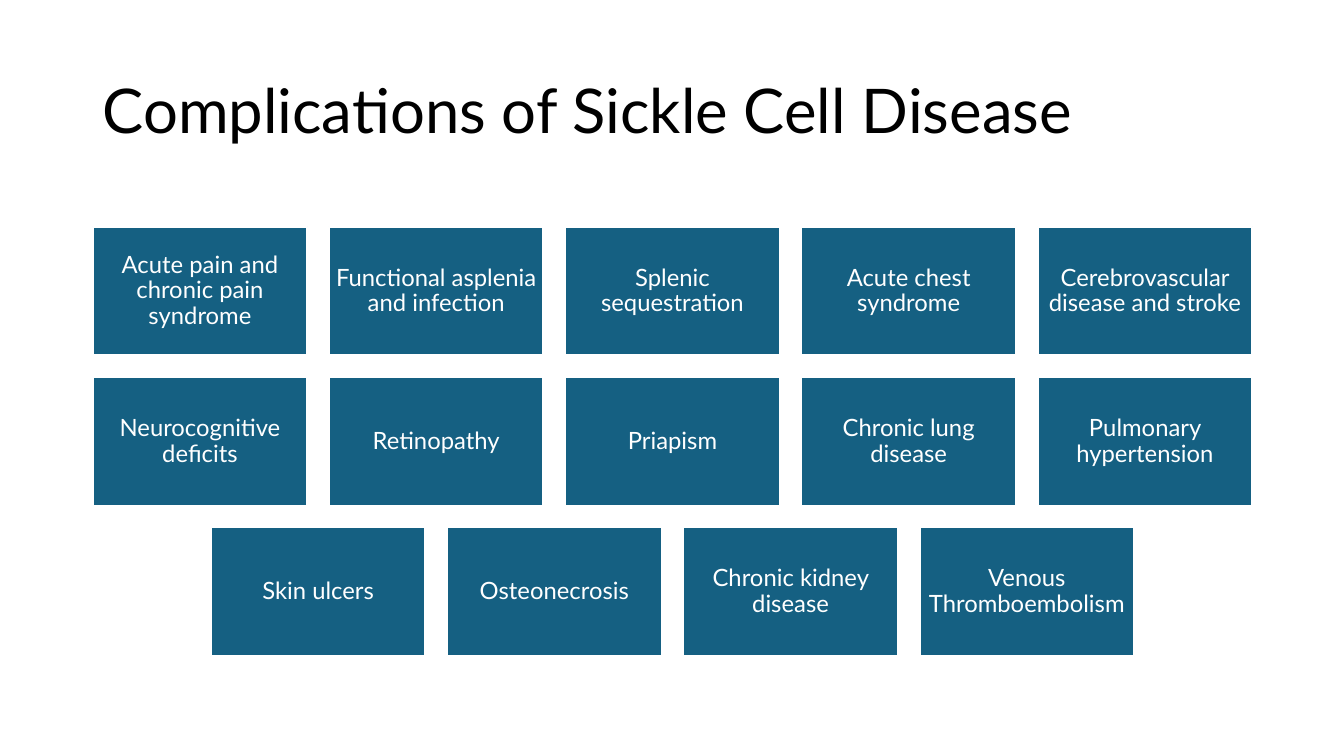
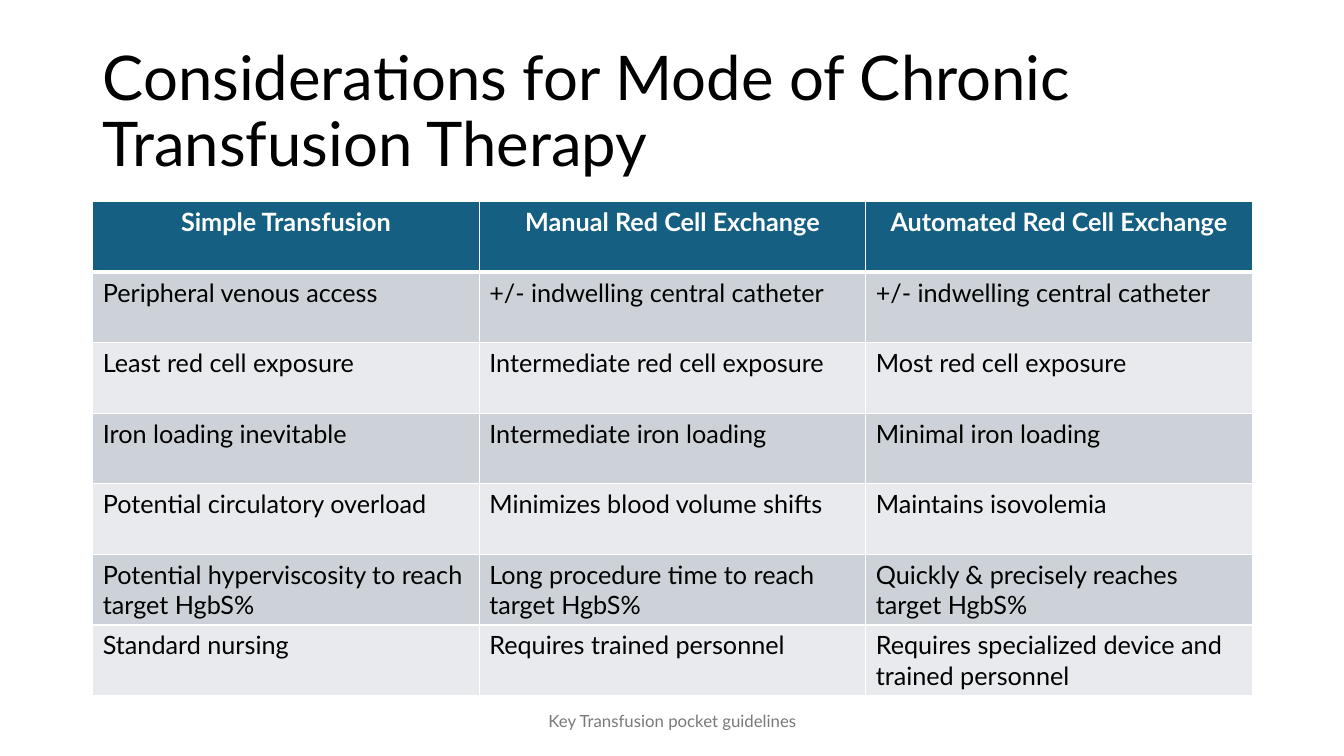
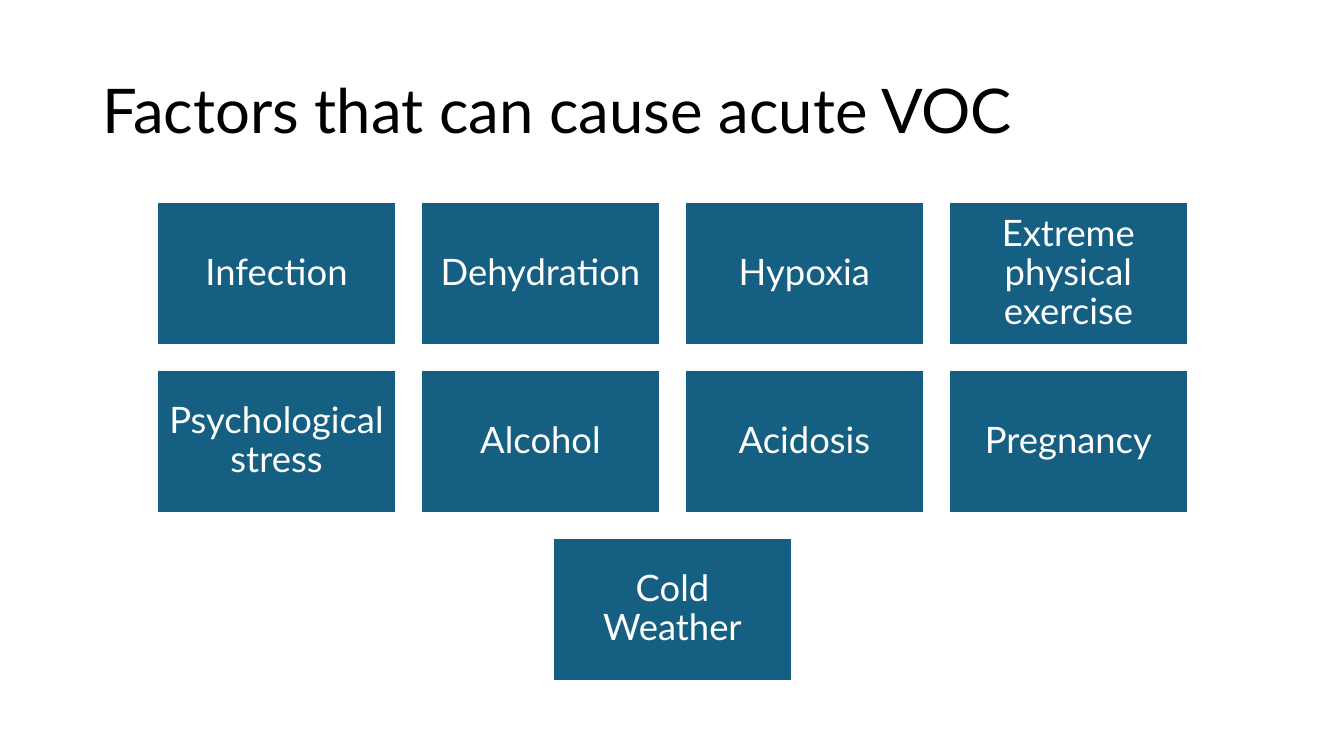
from dataclasses import dataclass

from lxml.etree import SubElement
from pptx import Presentation
from pptx.dml.color import RGBColor
from pptx.enum.shapes import MSO_SHAPE
from pptx.enum.text import MSO_ANCHOR, PP_ALIGN
from pptx.oxml.ns import qn
from pptx.util import Inches, Pt

FONT = "Lato"
BLACK = RGBColor(0x00, 0x00, 0x00)
WHITE = RGBColor(0xFF, 0xFF, 0xFF)
TEAL = RGBColor(0x15, 0x60, 0x82)
BAND_DARK = RGBColor(0xCC, 0xD2, 0xD8)
BAND_LIGHT = RGBColor(0xE8, 0xEA, 0xED)
FOOTER_GREY = RGBColor(0x79, 0x79, 0x79)


@dataclass(frozen=True)
class Box:
    """A region of the slide, in inches."""
    left: float
    top: float
    width: float
    height: float

    def emu(self):
        return [Inches(v) for v in (self.left, self.top, self.width, self.height)]


TITLE = Box(0.92, 0.4, 11.5, 1.45)
TILES = Box(0.92, 2, 11.5, 4.76)
TABLE = Box(0.92, 2, 11.5, 4.9)
FOOTER = Box(4.42, 6.95, 4.5, 0.4)

COMPLICATIONS = [
    "Acute pain and chronic pain syndrome",
    "Functional asplenia and infection",
    "Splenic sequestration",
    "Acute chest syndrome",
    "Cerebrovascular disease and stroke",
    "Neurocognitive deficits",
    "Retinopathy",
    "Priapism",
    "Chronic lung disease",
    "Pulmonary hypertension",
    "Skin ulcers",
    "Osteonecrosis",
    "Chronic kidney disease",
    "Venous Thromboembolism",
]
VOC_FACTORS = [
    "Infection", "Dehydration", "Hypoxia", "Extreme physical exercise",
    "Psychological stress", "Alcohol", "Acidosis", "Pregnancy",
    "Cold Weather",
]
TRANSFUSION_MODES = [
    ("Simple Transfusion", "Manual Red Cell Exchange",
     "Automated Red Cell Exchange"),
    ("Peripheral venous access", "+/- indwelling central catheter",
     "+/- indwelling central catheter"),
    ("Least red cell exposure", "Intermediate red cell exposure",
     "Most red cell exposure"),
    ("Iron loading inevitable", "Intermediate iron loading",
     "Minimal iron loading"),
    ("Potential circulatory overload", "Minimizes blood volume shifts",
     "Maintains isovolemia"),
    ("Potential hyperviscosity to reach target HgbS%",
     "Long procedure time to reach target HgbS%",
     "Quickly & precisely reaches target HgbS%"),
    ("Standard nursing", "Requires trained personnel",
     "Requires specialized device and trained personnel"),
]


def write(frame, text, size, color=BLACK, bold=False, align=PP_ALIGN.LEFT,
          anchor=MSO_ANCHOR.MIDDLE, spacing=1.0, inset=None):
    """Put one formatted paragraph into a text frame."""
    frame.word_wrap = True
    frame.vertical_anchor = anchor
    if inset is not None:
        frame.margin_left = frame.margin_right = Inches(inset)
        frame.margin_top = frame.margin_bottom = Inches(inset)
    paragraph = frame.paragraphs[0]
    paragraph.alignment = align
    paragraph.line_spacing = spacing
    run = paragraph.add_run()
    run.text = text
    run.font.name = FONT
    run.font.size = Pt(size)
    run.font.bold = bold
    run.font.color.rgb = color


def add_titled_slide(prs, title):
    slide = prs.slides.add_slide(prs.slide_layouts[6])
    heading = slide.shapes.add_textbox(*TITLE.emu())
    write(heading.text_frame, title, 44, spacing=0.9)
    return slide


def add_footer(slide, box, text):
    footer = slide.shapes.add_textbox(*box.emu())
    write(footer.text_frame, text, 12, color=FOOTER_GREY, align=PP_ALIGN.CENTER)


def add_tile(slide, box, label, size, inset):
    tile = slide.shapes.add_shape(MSO_SHAPE.RECTANGLE, *box.emu())
    tile.shadow.inherit = False
    tile.fill.solid()
    tile.fill.fore_color.rgb = TEAL
    tile.line.color.rgb = WHITE
    tile.line.width = Pt(1.5)
    write(tile.text_frame, label, size, color=WHITE, align=PP_ALIGN.CENTER,
          spacing=0.9, inset=inset)


def add_tile_grid(slide, box, labels, columns, tile_width, size, inset):
    """Centre rows of tiles in the box; gaps are a tenth of a tile's width."""
    gap = tile_width * 0.1
    tile_height = tile_width * 0.6
    rows = [labels[i:i + columns] for i in range(0, len(labels), columns)]
    grid_height = len(rows) * (tile_height + gap) - gap
    top = box.top + (box.height - grid_height) / 2
    for row in rows:
        row_width = len(row) * (tile_width + gap) - gap
        left = box.left + (box.width - row_width) / 2
        for label in row:
            add_tile(slide, Box(left, top, tile_width, tile_height),
                     label, size, inset)
            left += tile_width + gap
        top += tile_height + gap


def set_borders(cell, top=1, bottom=1):
    """Draw white cell borders, with widths in points."""
    properties = cell._tc.get_or_add_tcPr()
    for edge, width in (("L", 1), ("R", 1), ("T", top), ("B", bottom)):
        line = SubElement(properties, qn(f"a:ln{edge}"), w=str(Pt(width)))
        fill = SubElement(line, qn("a:solidFill"))
        SubElement(fill, qn("a:srgbClr"), val=str(WHITE))


def add_comparison_table(slide, box, rows):
    table = slide.shapes.add_table(len(rows), len(rows[0]), *box.emu()).table
    for row_height in table.rows:
        row_height.height = Inches(box.height / len(rows))
    for r, row in enumerate(rows):
        header = r == 0
        for c, text in enumerate(row):
            cell = table.cell(r, c)
            set_borders(cell, top=3 if r == 1 else 1, bottom=3 if header else 1)
            cell.fill.solid()
            cell.fill.fore_color.rgb = (
                TEAL if header else BAND_DARK if r % 2 else BAND_LIGHT)
            cell.vertical_anchor = MSO_ANCHOR.TOP
            write(cell.text_frame, text, 18, bold=header,
                  color=WHITE if header else BLACK, anchor=None,
                  align=PP_ALIGN.CENTER if header else PP_ALIGN.LEFT)


def main():
    prs = Presentation()
    prs.slide_width, prs.slide_height = Inches(13.33), Inches(7.5)

    complications = add_titled_slide(prs, "Complications of Sickle Cell Disease")
    add_tile_grid(complications, TILES, COMPLICATIONS, columns=5,
                  tile_width=2.13, size=17, inset=0.07)

    transfusion = add_titled_slide(
        prs, "Considerations for Mode of Chronic Transfusion Therapy")
    add_comparison_table(transfusion, TABLE, TRANSFUSION_MODES)
    add_footer(transfusion, FOOTER, "Key Transfusion pocket guidelines")

    factors = add_titled_slide(prs, "Factors that can cause acute VOC")
    add_tile_grid(factors, TILES, VOC_FACTORS, columns=4,
                  tile_width=2.38, size=26, inset=0.11)

    prs.save("out.pptx")


if __name__ == "__main__":
    main()
